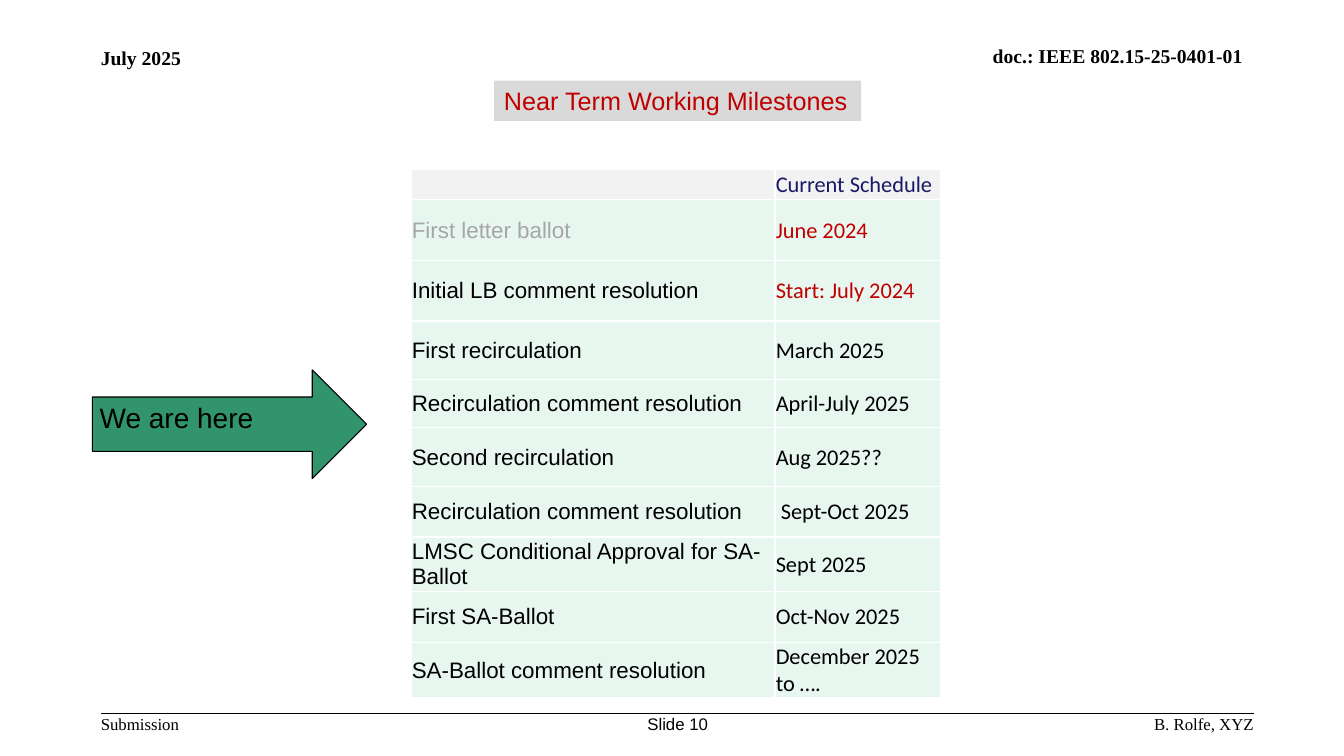
from dataclasses import dataclass
from typing import Any

from lxml import etree
from pptx import Presentation
from pptx import util as u
from pptx.dml.color import RGBColor
from pptx.enum import shapes, text
from pptx.oxml import ns

COLORS = {
    "black": "000000",
    "white": "FFFFFF",
    "red": "C00000",
    "navy": "191966",
    "gray": "A6A6A6",
    "title": "D9D9D9",
    "header": "F2F2F2",
    "body": "E7F6EF",
    "arrow": "32946A",
}
SERIF = "Times New Roman"
LEFT, RIGHT, CENTER = text.PP_ALIGN.LEFT, text.PP_ALIGN.RIGHT, text.PP_ALIGN.CENTER
TOP, MIDDLE, BOTTOM = text.MSO_ANCHOR.TOP, text.MSO_ANCHOR.MIDDLE, text.MSO_ANCHOR.BOTTOM
FOOT_Y = 17.98
COLUMNS = (9.17, 4.17)


@dataclass(frozen=True)
class Label:
    """Text in the page header or footer, placed in centimetres."""

    words: str
    x: float
    y: float
    w: float
    h: float
    size: int = 12
    font: str = SERIF
    bold: bool = False
    align: Any = LEFT
    anchor: Any = TOP
    wrap: bool = True


@dataclass(frozen=True)
class Milestone:
    """One table row: a task, its date and the row height in centimetres."""

    task: str
    date: str
    height: float
    task_color: str = "black"
    date_color: str = "black"
    fill: str = "body"


LABELS = (
    Label("July 2025", 2.54, 1.15, 5.64, 0.61, 14, bold=True),
    Label("doc.: IEEE 802.15-25-0401-01", 15.8, 1.09, 15.52, 0.61, 14,
          bold=True, align=RIGHT, anchor=BOTTOM),
    Label("Submission", 2.54, FOOT_Y, 2.64, 0.51),
    Label("Slide 10", 16.28, FOOT_Y, 1.6, 0.51, font="Arial", align=CENTER, wrap=False),
    Label("B. Rolfe, XYZ", 23.42, FOOT_Y, 8.18, 0.51, align=RIGHT),
)
MILESTONES = (
    Milestone("", "Current Schedule", 0.76, date_color="navy", fill="header"),
    Milestone("First letter ballot", "June 2024", 1.53, "gray", "red"),
    Milestone("Initial LB comment resolution", "Start: July 2024", 1.53, date_color="red"),
    Milestone("First recirculation", "March 2025", 1.47),
    Milestone("Recirculation comment resolution", "April-July 2025", 1.22),
    Milestone("Second recirculation", "Aug 2025??", 1.48),
    Milestone("Recirculation comment resolution", " Sept-Oct 2025", 1.27),
    Milestone("LMSC Conditional Approval for SA-Ballot", "Sept 2025", 1.37),
    Milestone("First SA-Ballot", "Oct-Nov 2025", 1.28),
    Milestone("SA-Ballot comment resolution", "December 2025 to ….", 1.35),
)


def rgb(name: str) -> RGBColor:
    """Return the named colour."""
    return RGBColor.from_string(COLORS[name])


def paint(target: Any, color: str) -> None:
    """Give a shape or cell a solid fill."""
    target.fill.solid()
    target.fill.fore_color.rgb = rgb(color)


def write(tf: Any, words: str, *, size: int, font: str = "Arial", color: str = "black",
          bold: bool = False, align: Any = LEFT) -> None:
    """Write one formatted paragraph into a text frame."""
    p = tf.paragraphs[0]
    p.alignment = align
    r = p.add_run()
    r.text = words
    r.font.size, r.font.name, r.font.bold = u.Pt(size), font, bold
    r.font.color.rgb = rgb(color)


def set_frame(tf: Any, x_inset: float, y_inset: float, *, wrap: bool = True,
              anchor: Any = TOP) -> None:
    """Set the insets, wrapping and anchor of a text frame."""
    tf.auto_size = text.MSO_AUTO_SIZE.NONE
    tf.word_wrap = wrap
    tf.vertical_anchor = anchor
    tf.margin_left = tf.margin_right = u.Cm(x_inset)
    tf.margin_top = tf.margin_bottom = u.Cm(y_inset)


def add_label(s: Any, label: Label) -> None:
    """Add one header or footer text box."""
    sp = s.shapes.add_textbox(u.Cm(label.x), u.Cm(label.y), u.Cm(label.w), u.Cm(label.h))
    set_frame(sp.text_frame, 0, 0, wrap=label.wrap, anchor=label.anchor)
    write(sp.text_frame, label.words, size=label.size, font=label.font,
          bold=label.bold, align=label.align)


def add_title(s: Any) -> None:
    """Format and fill the title placeholder."""
    sp = s.shapes.title
    sp.left, sp.top, sp.width, sp.height = u.Cm(12.45), u.Cm(2.03), u.Cm(9.25), u.Cm(1.02)
    paint(sp, "title")
    set_frame(sp.text_frame, 0.25, 0.13, wrap=False)
    write(sp.text_frame, "Near Term Working Milestones", size=18, color="red")


def add_footer_rule(s: Any) -> None:
    """Draw the line above the footer."""
    rule = s.shapes.add_connector(shapes.MSO_CONNECTOR.STRAIGHT, u.Cm(2.54), u.Cm(FOOT_Y),
                                  u.Cm(31.6), u.Cm(FOOT_Y))
    rule.line.color.rgb = rgb("black")
    rule.line.width = u.Pt(1)
    etree.SubElement(rule._element.spPr, ns.qn("a:effectLst"))


def add_marker(s: Any) -> None:
    """Add the arrow that points at the current milestone."""
    sp = s.shapes.add_shape(shapes.MSO_SHAPE.RIGHT_ARROW, u.Cm(2.33), u.Cm(9.32),
                            u.Cm(6.91), u.Cm(2.74))
    sp.shadow.inherit = False
    paint(sp, "arrow")
    sp.line.color.rgb = rgb("black")
    sp.line.width = u.Pt(0.75)
    set_frame(sp.text_frame, 0.18, 0.1)
    write(sp.text_frame, "We are here", size=20)


def add_borders(cell: Any) -> None:
    """Draw white borders around a table cell."""
    tc_pr = cell._tc.get_or_add_tcPr()
    for side in ("lnL", "lnR", "lnT", "lnB"):
        ln = etree.SubElement(tc_pr, ns.qn(f"a:{side}"), w=str(u.Pt(1)))
        fill = etree.SubElement(ln, ns.qn("a:solidFill"))
        etree.SubElement(fill, ns.qn("a:srgbClr"), val=COLORS["white"])


def fill_cell(cell: Any, words: str, font: str, color: str, fill: str) -> None:
    """Format one table cell and write its text."""
    add_borders(cell)
    paint(cell, fill)
    cell.vertical_anchor = MIDDLE
    cell.margin_left = cell.margin_right = cell.margin_top = u.Cm(0.02)
    cell.margin_bottom = 0
    write(cell.text_frame, words, size=16, font=font, color=color)


def add_schedule(s: Any) -> None:
    """Add the milestone table."""
    height = sum(m.height for m in MILESTONES)
    table = s.shapes.add_table(len(MILESTONES), len(COLUMNS), u.Cm(10.36), u.Cm(4.27),
                               u.Cm(sum(COLUMNS)), u.Cm(height)).table
    for column, width in zip(table.columns, COLUMNS):
        column.width = u.Cm(width)
    for i, m in enumerate(MILESTONES):
        table.rows[i].height = u.Cm(m.height)
        fill_cell(table.cell(i, 0), m.task, "Arial", m.task_color, m.fill)
        fill_cell(table.cell(i, 1), m.date, "Calibri", m.date_color, m.fill)


def main() -> None:
    """Build and save the milestone slide."""
    prs = Presentation()
    prs.slide_width, prs.slide_height = u.Cm(33.87), u.Cm(19.05)
    s = prs.slides.add_slide(prs.slide_layouts[5])
    for label in LABELS:
        add_label(s, label)
    add_footer_rule(s)
    add_title(s)
    add_marker(s)
    add_schedule(s)
    prs.save("out.pptx")


if __name__ == "__main__":
    main()
